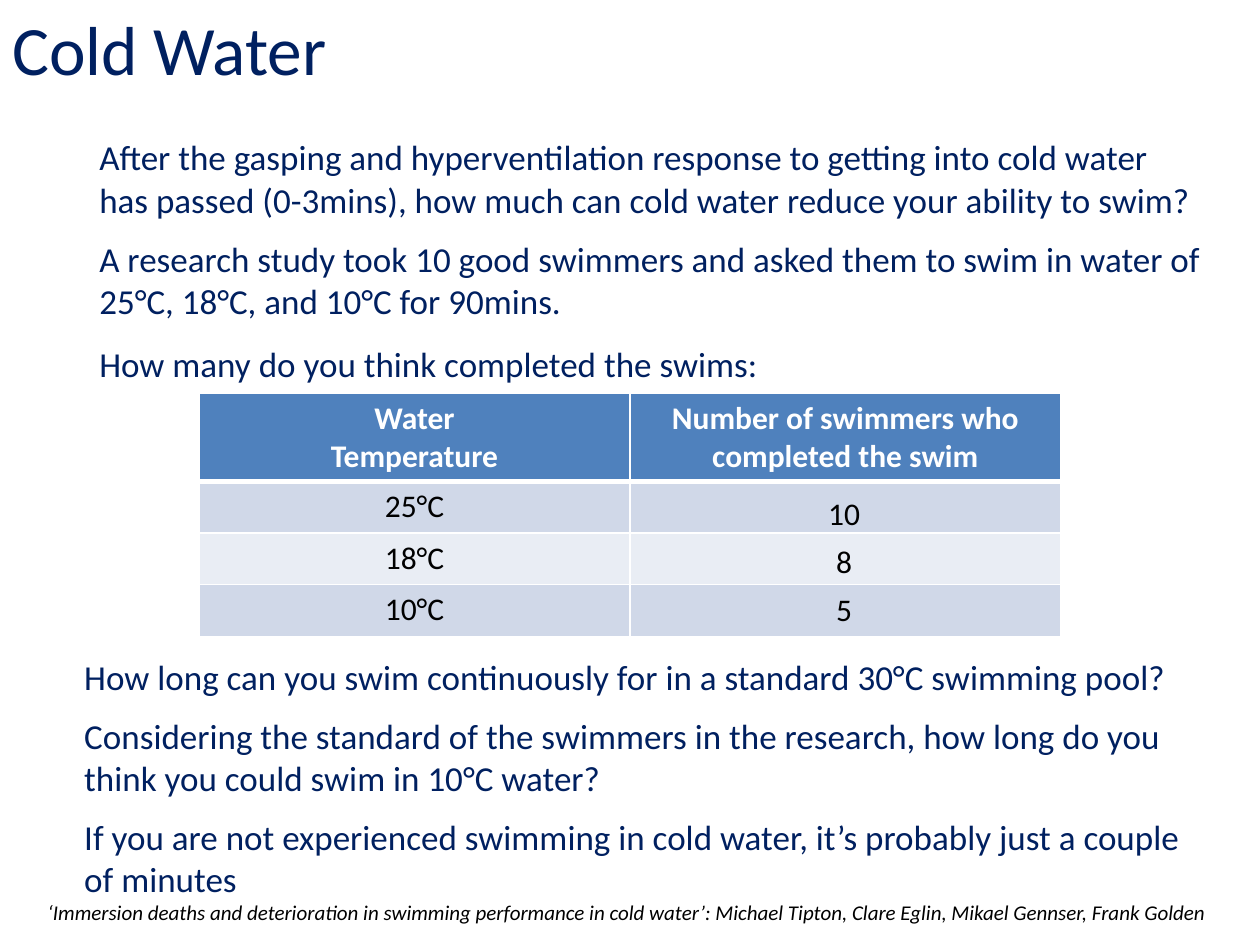
from pptx import Presentation
from pptx import util as u
from pptx.dml.color import RGBColor
from pptx.enum import text
from pptx.oxml import parse_xml
from pptx.oxml.ns import nsdecls

THEME = {
    "font": "Calibri", "navy": "002060", "black": "000000", "white": "FFFFFF",
    "header": "4F81BD", "bands": ("D0D8E8", "E9EDF4"),
    "title": 39.6, "body": 20, "table": 18, "source": 12,
}

# Content
TITLE = ["Cold Water"]
INTRO = [
    "After the gasping and hyperventilation response to getting into cold water has passed "
    "(0-3mins), how much can cold water reduce your ability to swim?",
    "A research study took 10 good swimmers and asked them to swim in water of "
    "25°C, 18°C, and 10°C for 90mins.",
]
QUESTION = ["How many do you think completed the swims:"]
HEADERS = [["Water", "Temperature"], ["Number of swimmers who completed the swim"]]
TEMPERATURES = ["25°C", "18°C", "10°C"]
COMPLETED = ["10", "8", "5"]
DISCUSSION = [
    "How long can you swim continuously for in a standard 30°C swimming pool?",
    "Considering the standard of the swimmers in the research, how long do you think "
    "you could swim in 10°C water?",
    "If you are not experienced swimming in cold water, it’s probably just a couple of minutes",
]
SOURCE = ["‘Immersion deaths and deterioration in swimming performance in cold water’: "
          "Michael Tipton, Clare Eglin, Mikael Gennser, Frank Golden"]


def write(tf, lines, size, color, gap=0, center=False, bold=False, italic=False):
    for i, line in enumerate(lines):
        p = tf.paragraphs[0] if i == 0 else tf.add_paragraph()
        if center:
            p.alignment = text.PP_ALIGN.CENTER
        if i and gap:
            p.space_before = u.Pt(gap)
        r = p.add_run()
        r.text = line
        f = r.font
        f.name, f.size, f.bold, f.italic = THEME["font"], u.Pt(size), bold, italic
        f.color.rgb = RGBColor.from_string(color)


def add_text(s, box, lines, size, color, wrap=True, **style):
    tf = s.shapes.add_textbox(*map(u.Inches, box)).text_frame
    tf.word_wrap = wrap
    write(tf, lines, size, color, **style)


def fill_cell(cell, color, bottom=1):
    tc_pr = cell._tc.get_or_add_tcPr()
    for side, width in (("L", 1), ("R", 1), ("T", 1), ("B", bottom)):
        tc_pr.append(parse_xml(
            f'<a:ln{side} {nsdecls("a")} w="{u.Pt(width)}"><a:solidFill>'
            f'<a:srgbClr val="{THEME["white"]}"/></a:solidFill></a:ln{side}>'))
    cell.fill.solid()
    cell.fill.fore_color.rgb = RGBColor.from_string(color)


def add_results(s):
    rows = len(TEMPERATURES) + 1
    table = s.shapes.add_table(rows, 2, *map(u.Inches, (1.58, 3.12, 6.84, 1.92))).table
    for col in table.columns:
        col.width = u.Inches(3.42)
    for i, row in enumerate(table.rows):
        row.height = u.Inches(0.41 if i else 0.69)
    for cell, lines in zip(table.rows[0].cells, HEADERS):
        write(cell.text_frame, lines, THEME["table"], THEME["white"], center=True, bold=True)
        fill_cell(cell, THEME["header"], bottom=3)
    for i, temperature in enumerate(TEMPERATURES):
        cells = table.rows[i + 1].cells
        write(cells[0].text_frame, [temperature], THEME["table"], THEME["black"], center=True)
        for cell in cells:
            fill_cell(cell, THEME["bands"][i % 2])


def main():
    prs = Presentation()
    prs.slide_width, prs.slide_height = u.Inches(10), u.Inches(7.5)
    s = prs.slides.add_slide(prs.slide_layouts[6])
    navy, black, body = THEME["navy"], THEME["black"], THEME["body"]

    # Title and introduction
    add_text(s, (0, 0, 8.62, 0.56), TITLE, THEME["title"], navy)
    add_text(s, (0.69, 1.03, 8.97, 1.58), INTRO, body, navy, gap=9.8)

    # Results table, with the answers laid over its second column
    add_results(s)
    add_text(s, (0.69, 2.67, 5.47, 0.44), QUESTION, body, navy, wrap=False)
    add_text(s, (6.47, 3.87, 0.46, 1.18), COMPLETED, THEME["table"], black,
             wrap=False, gap=6, center=True)

    # Discussion and source
    add_text(s, (0.57, 5.15, 9.08, 2.05), DISCUSSION, body, navy, gap=9.8)
    add_text(s, (0.28, 7.09, 9.49, 0.3), SOURCE, THEME["source"], black,
             wrap=False, italic=True)

    prs.save("out.pptx")


if __name__ == "__main__":
    main()
